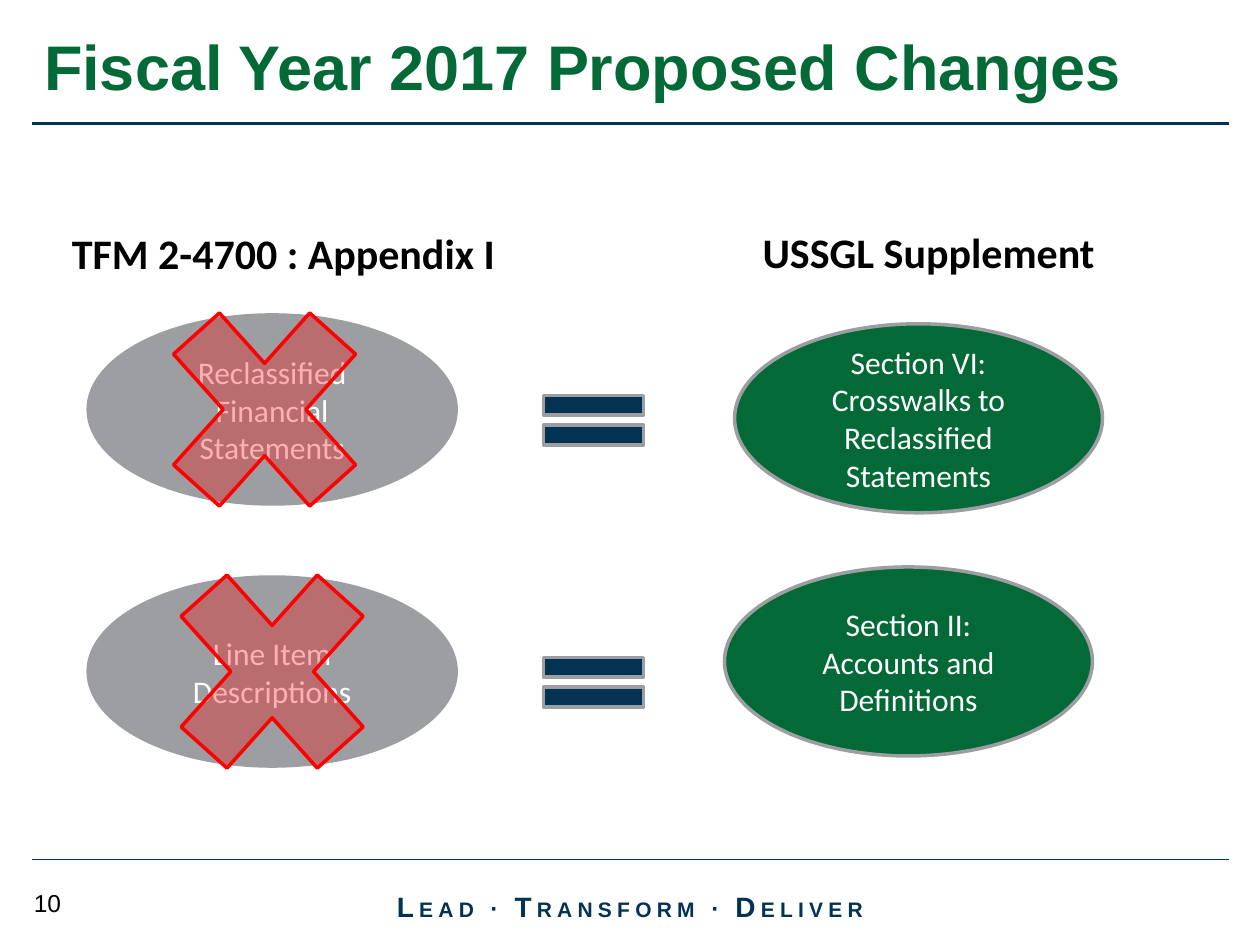
from lxml import etree
from pptx import Presentation
from pptx.dml.color import RGBColor
from pptx.enum import shapes, text
from pptx.oxml import ns
from pptx.util import Inches, Pt

NAVY = RGBColor(0x04, 0x32, 0x53)
GREEN = RGBColor(0x03, 0x6A, 0x37)
GRAY = RGBColor(0x9C, 0x9E, 0xA2)
RED = RGBColor(0xFF, 0, 0)
WHITE = RGBColor(0xFF, 0xFF, 0xFF)
BLACK = RGBColor(0, 0, 0)

TITLE = "Fiscal Year 2017 Proposed Changes"
HEADS = [
    ("TFM 2-4700 : Appendix I", (0.33, 1.76, 3.84, 0.5)),
    ("USSGL Supplement", (5.83, 1.75, 3.08, 0.5)),
]
OVALS = [
    ("Reclassified Financial Statements", 0.7, 2.5, GRAY),
    ("Line Item Descriptions", 0.7, 4.58, GRAY),
    ("Section VI: Crosswalks to Reclassified Statements", 5.83, 2.57, GREEN),
    ("Section II: Accounts and Definitions", 5.75, 4.5, GREEN),
]
EQUALS = [(4.17, 3), (4.17, 5.08)]
CROSSES = [(1.06, 2.09), (1.12, 4.17)]
RULES = [(6.82, 0.75), (0.98, 2.25)]
MOTTO = [("L", 16), ("EAD ", 12), ("∙ ", 14), ("T", 16), ("RANSFORM ", 12),
         ("∙ ", 14), ("D", 16), ("ELIVER", 12)]
PAGE = "10"

deck = Presentation()
deck.slide_width, deck.slide_height = Inches(10), Inches(7.5)
slide = deck.slides.add_slide(deck.slide_layouts[5])
tree = slide.shapes


def write(shape, runs, font="Calibri", color=BLACK, bold=False, gap=0,
          align=text.PP_ALIGN.CENTER, anchor=text.MSO_ANCHOR.TOP):
    frame = shape.text_frame
    frame.word_wrap = True
    frame.auto_size = text.MSO_AUTO_SIZE.NONE
    frame.vertical_anchor = anchor
    para = frame.paragraphs[0]
    para.alignment = align
    for words, size in runs:
        run = para.add_run()
        run.text = words
        run.font.name, run.font.size = font, Pt(size)
        run.font.bold, run.font.color.rgb = bold, color
        if gap:
            run._r.get_or_add_rPr().set("spc", str(gap * 100))


def box(*place):
    return tree.add_textbox(*map(Inches, place))


def draw(kind, place, fill, edge):
    shape = tree.add_shape(kind, *map(Inches, place))
    shape.shadow.inherit = False
    shape.fill.solid()
    shape.fill.fore_color.rgb = fill
    shape.line.color.rgb = edge
    shape.line.width = Pt(2)
    return shape


for y, width in RULES:
    rule = tree.add_connector(shapes.MSO_CONNECTOR.STRAIGHT,
                              Inches(0.25), Inches(y), Inches(9.75), Inches(y))
    rule.line.color.rgb, rule.line.width = NAVY, Pt(width)
    etree.SubElement(rule._element.spPr, ns.qn("a:effectLst"))

write(box(2.83, 6.99, 4.34, 0.4), MOTTO, font="Arial", color=NAVY, bold=True,
      gap=3, anchor=text.MSO_ANCHOR.MIDDLE)
write(box(0.17, 7, 1.25, 0.33), [(PAGE, 14)], font="Arial",
      align=text.PP_ALIGN.LEFT)

title = tree.title
title.left, title.top, title.width, title.height = map(
    Inches, (0.25, 0.17, 9.5, 0.75))
write(title, [(TITLE, 36)], font="Arial", color=GREEN, bold=True,
      align=text.PP_ALIGN.LEFT)

for words, place in HEADS:
    write(box(*place), [(words, 24)], bold=True)

for words, x, y, fill in OVALS:
    oval = draw(shapes.MSO_SHAPE.OVAL, (x, y, 2.92, 1.5), fill, GRAY)
    write(oval, [(words, 18)], color=WHITE, anchor=text.MSO_ANCHOR.MIDDLE)

for x, y in EQUALS:
    draw(shapes.MSO_SHAPE.MATH_EQUAL, (x, y, 1.08, 0.67), NAVY, GRAY)

for x, y in CROSSES:
    cross = draw(shapes.MSO_SHAPE.MATH_MULTIPLY, (x, y, 2.08, 2.32), RED, RED)
    tint = cross._element.spPr.find(ns.qn("a:solidFill"))[0]
    etree.SubElement(tint, ns.qn("a:alpha")).set("val", "31000")

deck.save("out.pptx")
